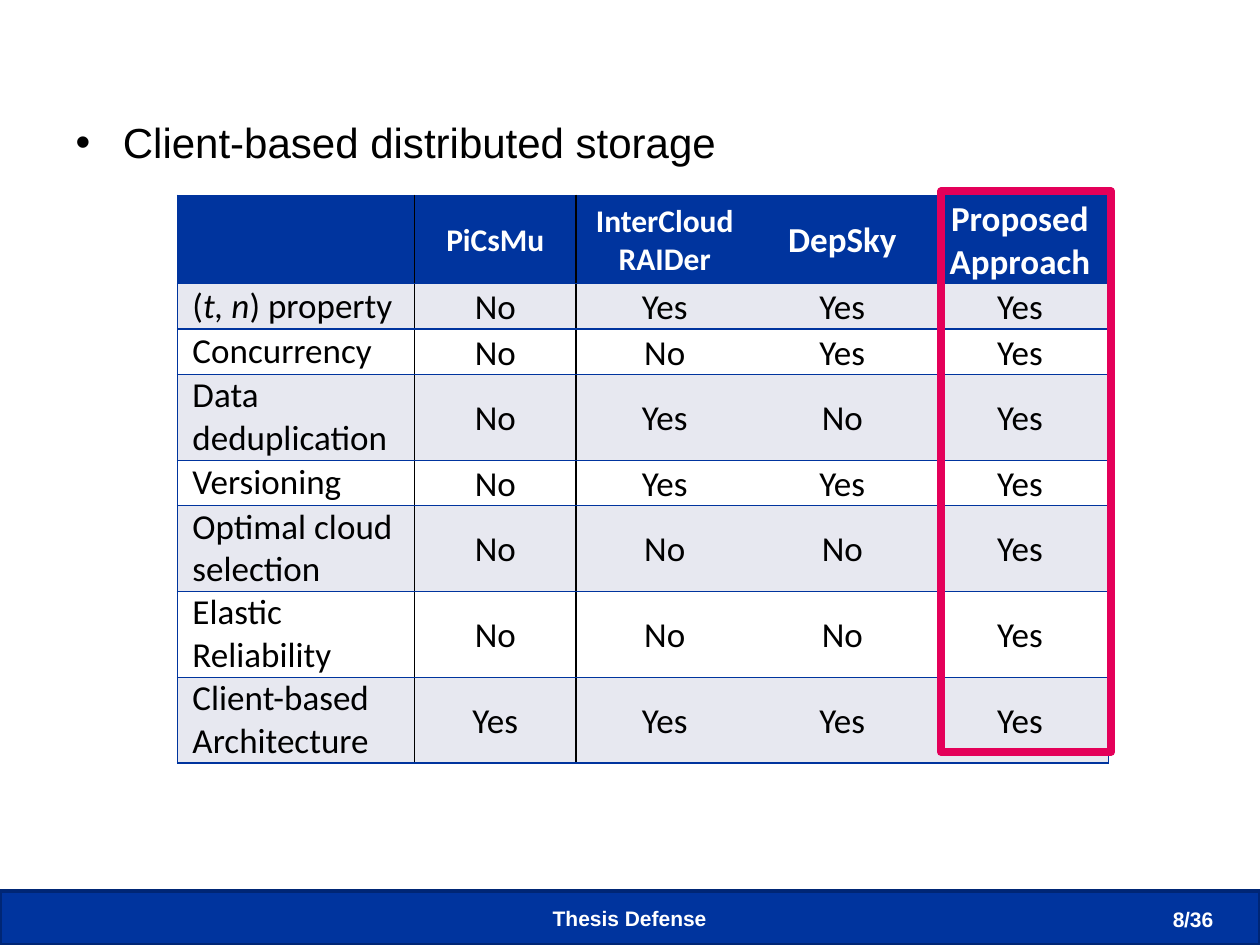
from lxml import etree
from pptx import Presentation
from pptx.dml.color import RGBColor
from pptx.enum import shapes, text
from pptx.oxml import ns
from pptx.util import Cm, Pt

HEX = {"blue": "00349E", "navy": "002675", "pink": "E40059", "gray": "E7E8F0",
       "white": "FFFFFF", "black": "000000"}
RGB = {name: RGBColor.from_string(code) for name, code in HEX.items()}
ALIGN = text.PP_ALIGN
MID = text.MSO_ANCHOR.MIDDLE


def style(font, color, **values):
    for key, value in values.items():
        setattr(font, key, value)
    font.color.rgb = RGB[color]


def edge(cell, side, color):
    line = etree.SubElement(cell._tc.get_or_add_tcPr(), ns.qn("a:ln" + side), w=str(Pt(1)))
    if color:
        fill = etree.SubElement(line, ns.qn("a:solidFill"))
        etree.SubElement(fill, ns.qn("a:srgbClr"), val=HEX[color])
    else:
        etree.SubElement(line, ns.qn("a:noFill"))


deck = Presentation()
deck.slide_width, deck.slide_height = Cm(25.4), Cm(19.05)
slide = deck.slides.add_slide(deck.slide_layouts[1])
title = slide.shapes.title
title.element.getparent().remove(title.element)

# Bullet line
body = slide.placeholders[1]
body.left, body.top, body.width, body.height = Cm(1.27), Cm(2.22), Cm(22.86), Cm(1.6)
body.text_frame.text = "Client-based distributed storage"
style(body.text_frame.paragraphs[0].runs[0].font, "black", name="Arial", size=Pt(24))

# Comparison table
rows = [
    ["", "PiCsMu", "InterCloud\vRAIDer", "DepSky", "Proposed Approach"],
    ["(t, n) property", "No", "Yes", "Yes", "Yes"],
    ["Concurrency", "No", "No", "Yes", "Yes"],
    ["Data \vdeduplication", "No", "Yes", "No", "Yes"],
    ["Versioning", "No", "Yes", "Yes", "Yes"],
    ["Optimal cloud \vselection", "No", "No", "No", "Yes"],
    ["Elastic \vReliability", "No", "No", "No", "Yes"],
    ["Client-based \vArchitecture", "Yes", "Yes", "Yes", "Yes"],
]
widths = [4.78, 3.25, 3.58, 3.58, 3.58]
rules = ["blue", "black", "black", None, None, "blue"]  # vertical, left to right
frame = slide.shapes.add_table(len(rows), len(widths), Cm(3.58), Cm(3.94),
                               Cm(sum(widths)), Cm(11.43))
table = frame.table
table.first_row = table.horz_banding = False
# "No Style, No Grid" leaves only the borders set below
table._tbl.tblPr.find(ns.qn("a:tableStyleId")).text = "{2D5ABB26-0587-4C30-8999-92F81FD0307C}"
for col, width in zip(table.columns, widths):
    col.width = Cm(width)

for r, row in enumerate(rows):
    head = r == 0
    table.rows[r].height = Cm(1.77 if head else 1.73 if "\v" in row[0] else 0.9)
    for c, words in enumerate(row):
        cell = table.cell(r, c)
        label = c == 0
        form = {"vertical_anchor": MID, "margin_left": Cm(0.3 if label else 0.05),
                "margin_right": Cm(0.05), "margin_top": Cm(0 if label else 0.05),
                "margin_bottom": Cm(0)}
        for key, value in form.items():
            setattr(cell, key, value)

        # Borders and fill
        for side, color in zip("LRTB", (rules[c], rules[c + 1], "blue", "blue")):
            edge(cell, side, color)
        cell.fill.solid()
        cell.fill.fore_color.rgb = RGB["blue" if head else "gray" if r % 2 else "white"]

        # Text, with the variables of the first property in italics
        if words.startswith("("):
            for part in ("(", "t, n", ") property"):
                run = cell.text_frame.paragraphs[0].add_run()
                run.text = part
                run.font.italic = part == "t, n"
        elif words:
            cell.text_frame.text = words
        para = cell.text_frame.paragraphs[0]
        para.alignment = ALIGN.LEFT if label else ALIGN.CENTER
        for run in para.runs:
            style(run.font, "white" if head else "black", name="Calibri", bold=head,
                  size=Pt(18 if head and c < 3 else 20))

# Frame around the last column, and footer band
for box, fill, line, weight in [
    ((18.97, 3.86, 3.43, 11.3), None, "pink", 4.5),
    ((0, 17.96, 25.4, 1.09), "blue", "navy", 2),
]:
    rect = slide.shapes.add_shape(shapes.MSO_SHAPE.RECTANGLE, *map(Cm, box))
    rect.shadow.inherit = False
    rect.line.color.rgb = RGB[line]
    rect.line.width = Pt(weight)
    if fill:
        rect.fill.solid()
        rect.fill.fore_color.rgb = RGB[fill]
    else:
        rect.fill.background()

# Footer text and page number
for words, box, align, wrap, anchor in [
    ("Thesis Defense", (8.67, 18, 8.05, 1.02), ALIGN.CENTER, True, MID),
    ("8", (18.21, 18.01, 5.92, 1.02), ALIGN.RIGHT, True, MID),
    ("/36", (23.62, 18.16, 1.12, 0.76), ALIGN.LEFT, False, text.MSO_ANCHOR.TOP),
]:
    note = slide.shapes.add_textbox(*map(Cm, box)).text_frame
    note.word_wrap, note.vertical_anchor = wrap, anchor
    note.text = words
    note.paragraphs[0].alignment = align
    style(note.paragraphs[0].runs[0].font, "white", name="Arial", size=Pt(12), bold=True)

deck.save("out.pptx")
